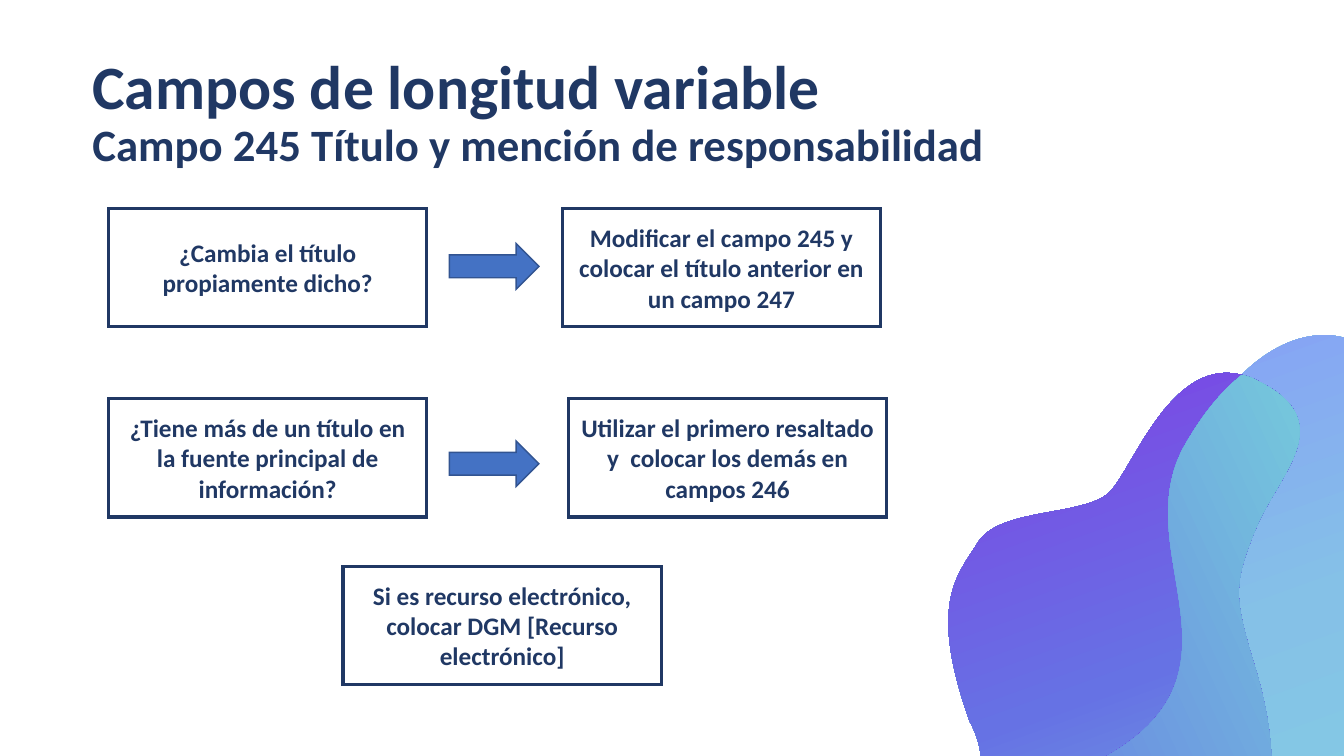
from copy import deepcopy
from math import cos, radians, sin

from lxml.etree import SubElement
from pptx import Presentation
from pptx.dml.color import RGBColor
from pptx.enum.shapes import MSO_SHAPE as Shape
from pptx.enum.text import MSO_ANCHOR as Anchor, MSO_AUTO_SIZE as AutoSize, PP_ALIGN as Align
from pptx.oxml.ns import qn
from pptx.util import Pt

NAVY = RGBColor(0x20, 0x38, 0x64)
WHITE = RGBColor(0xFF, 0xFF, 0xFF)
BLUE = RGBColor(0x44, 0x72, 0xC4)
DARK_BLUE = RGBColor(0x32, 0x54, 0x91)
AQUA = RGBColor(0x80, 0xDE, 0xDE)
SKY = RGBColor(0x85, 0xC1, 0xE7)
PERIWINKLE = RGBColor(0x87, 0x8C, 0xFF)
MINT = RGBColor(0x7C, 0xEF, 0xD8)
INDIGO = RGBColor(0x66, 0x72, 0xE4)
VIOLET = RGBColor(0x88, 0x2B, 0xE5)
FONT = "Calibri"

# Content: title lines with sizes, boxes (text, left, top, fill) and arrows in points
TITLE = [("Campos de longitud variable", 44),
         ("Campo 245 Título y mención de responsabilidad", 32)]
BOX_SIZE = (227.5, 84.5)
BOXES = [
    ("¿Cambia el título propiamente dicho?", 77.5, 149, WHITE),
    ("Utilizar el primero resaltado y  colocar los demás en campos 246", 406, 284.8, WHITE),
    ("¿Tiene más de un título en la fuente principal de información?", 77.5, 284.8, WHITE),
    ("Modificar el campo 245 y colocar el título anterior en un campo 247", 401.6, 149, None),
    ("Si es recurso electrónico, colocar DGM [Recurso electrónico]", 245, 404.5, WHITE),
]
ARROW_LEFT, ARROW_SIZE = 321, (64, 32.5)
ARROW_TOPS = [174, 315]

# Waves: gradient stops, gradient angle, frame, start point and Bézier curves in inches
TILT = 52.2
INCH = 72
WAVES = [
    ([(0, AQUA), (54, SKY), (100, PERIWINKLE)], 162, (9.44, 3.45, 5.02, 6.67), (10.64, 7.59), [
        (12.88, 6.72, 11.21, 5.42, 11.9, 4.27),
        (12.58, 3.11, 13.36, 3.25, 13.58, 3.49),
        (13.8, 3.72, 13.84, 3.96, 13.51, 4.35),
        (13.18, 4.73, 13.86, 5.47, 14.32, 5.97),
        (14.78, 6.48, 14.96, 7.62, 13.85, 7.84),
        (12.73, 8.06, 12.79, 8.05, 12.25, 8.95),
        (11.71, 9.84, 11.07, 9.81, 11.07, 9.81),
        (11.07, 9.81, 9.99, 9.69, 9.85, 8.81),
        (9.71, 7.92, 10.64, 7.59, 10.64, 7.59),
    ]),
    ([(0, MINT), (51, INDIGO), (100, VIOLET)], 162, (8.84, 3.68, 5.07, 6.23), (9.4, 8.95), [
        (9.4, 8.95, 9.78, 9.82, 11.42, 9.26),
        (13.05, 8.7, 12.6, 7.09, 12.42, 6.52),
        (12.25, 5.94, 12.23, 5.79, 12.46, 5.24),
        (12.69, 4.69, 13.3, 4.19, 12.48, 3.78),
        (11.66, 3.37, 11.25, 4.66, 11, 4.89),
        (10.75, 5.12, 9.93, 5.04, 9.71, 5.37),
        (9.5, 5.71, 9.2, 5.97, 9.62, 7.16),
        (9.62, 7.16, 9.97, 7.7, 9.46, 8.32),
        (9.46, 8.32, 9.19, 8.7, 9.4, 8.95),
    ]),
    ([(0, VIOLET), (19, INDIGO), (100, MINT)], 77, (9.54, 4.02, 4.38, 5.86), (11.42, 9.26), [
        (10.68, 9.51, 10.19, 9.47, 9.89, 9.35),
        (9.81, 9.24, 9.75, 9.1, 9.72, 8.93),
        (9.58, 8.04, 10.51, 7.72, 10.51, 7.72),
        (12.75, 6.85, 11.08, 5.54, 11.77, 4.39),
        (11.95, 4.08, 12.14, 3.86, 12.32, 3.72),
        (12.37, 3.73, 12.43, 3.75, 12.48, 3.78),
        (13.3, 4.19, 12.69, 4.69, 12.46, 5.24),
        (12.23, 5.79, 12.25, 5.94, 12.42, 6.52),
        (12.6, 7.09, 13.05, 8.7, 11.42, 9.26),
    ]),
]


def add_wave(page, stops, angle, frame, start, curves):
    left, top, width, height = (Pt(INCH * length) for length in frame)
    cosine, sine = cos(radians(TILT)), sin(radians(TILT))

    def level(x, y):
        """Turn a slide point back into the untilted frame."""
        across = Pt(INCH * x) - left - width / 2
        down = Pt(INCH * y) - top - height / 2
        return (round(width / 2 + across * cosine + down * sine),
                round(height / 2 - across * sine + down * cosine))

    first = level(*start)
    curves = [[level(*curve[i:i + 2]) for i in (0, 2, 4)] for curve in curves]
    builder = page.shapes.build_freeform(*first)
    builder.add_line_segments([curve[-1] for curve in curves], close=True)
    wave = builder.convert_to_shape()
    wave.left, wave.top, wave.width, wave.height = left, top, width, height
    wave.rotation = TILT
    wave.shadow.inherit = False
    wave.line.fill.background()

    # Curved outline in place of the straight segments
    outline = next(wave._element.iter(qn("a:path")))
    for segment in list(outline):
        outline.remove(segment)
    outline.set("w", str(width))
    outline.set("h", str(height))
    for tag, points in [("a:moveTo", [first])] + [("a:cubicBezTo", c) for c in curves]:
        segment = SubElement(outline, qn(tag))
        for x, y in points:
            SubElement(segment, qn("a:pt"), x=str(x), y=str(y))
    SubElement(outline, qn("a:close"))

    # Three-stop gradient
    wave.fill.gradient()
    wave.fill.gradient_angle = angle
    stop_list = next(wave._element.iter(qn("a:gsLst")))
    stop_list.append(deepcopy(stop_list[0]))
    for stop, (position, color) in zip(wave.fill.gradient_stops, stops):
        stop.position = position / 100
        stop.color.rgb = color


def add_block(page, kind, left, top, size, fill, line, weight):
    block = page.shapes.add_shape(kind, Pt(left), Pt(top), *map(Pt, size))
    block.shadow.inherit = False
    if fill is None:
        block.fill.background()
    else:
        block.fill.solid()
        block.fill.fore_color.rgb = fill
    block.line.color.rgb = line
    block.line.width = Pt(weight)
    SubElement(block._element.spPr.find(qn("a:ln")), qn("a:miter"), lim="800000")
    return block


def style(font, size):
    font.name, font.size, font.bold = FONT, Pt(size), True
    font.color.rgb = NAVY


def main():
    deck = Presentation()
    deck.slide_width, deck.slide_height = Pt(960), Pt(540)
    page = deck.slides.add_slide(deck.slide_layouts[5])

    # Title
    title = page.shapes.title
    title.left, title.top, title.width, title.height = Pt(66), Pt(29), Pt(828), Pt(104.5)
    frame = title.text_frame
    frame.word_wrap = True
    frame.auto_size = AutoSize.NONE
    frame.vertical_anchor = Anchor.MIDDLE
    frame.margin_left = frame.margin_top = frame.margin_right = frame.margin_bottom = 0
    para = frame.paragraphs[0]
    para.alignment = Align.LEFT
    para.line_spacing = 0.9
    for number, (text, size) in enumerate(TITLE):
        if number:
            para.add_line_break()
        span = para.add_run()
        span.text = text
        style(span.font, size)

    # Decorative waves
    for wave in WAVES:
        add_wave(page, *wave)

    # Question and answer boxes
    for text, left, top, fill in BOXES:
        box = add_block(page, Shape.RECTANGLE, left, top, BOX_SIZE, fill, NAVY, 2.25)
        box.text_frame.word_wrap = True
        box.text_frame.vertical_anchor = Anchor.MIDDLE
        para = box.text_frame.paragraphs[0]
        para.text = text
        para.alignment = Align.CENTER
        style(para.font, 18)

    # Arrows from question to answer
    for top in ARROW_TOPS:
        add_block(page, Shape.RIGHT_ARROW, ARROW_LEFT, top, ARROW_SIZE, BLUE, DARK_BLUE, 1)

    deck.save("out.pptx")


if __name__ == "__main__":
    main()
